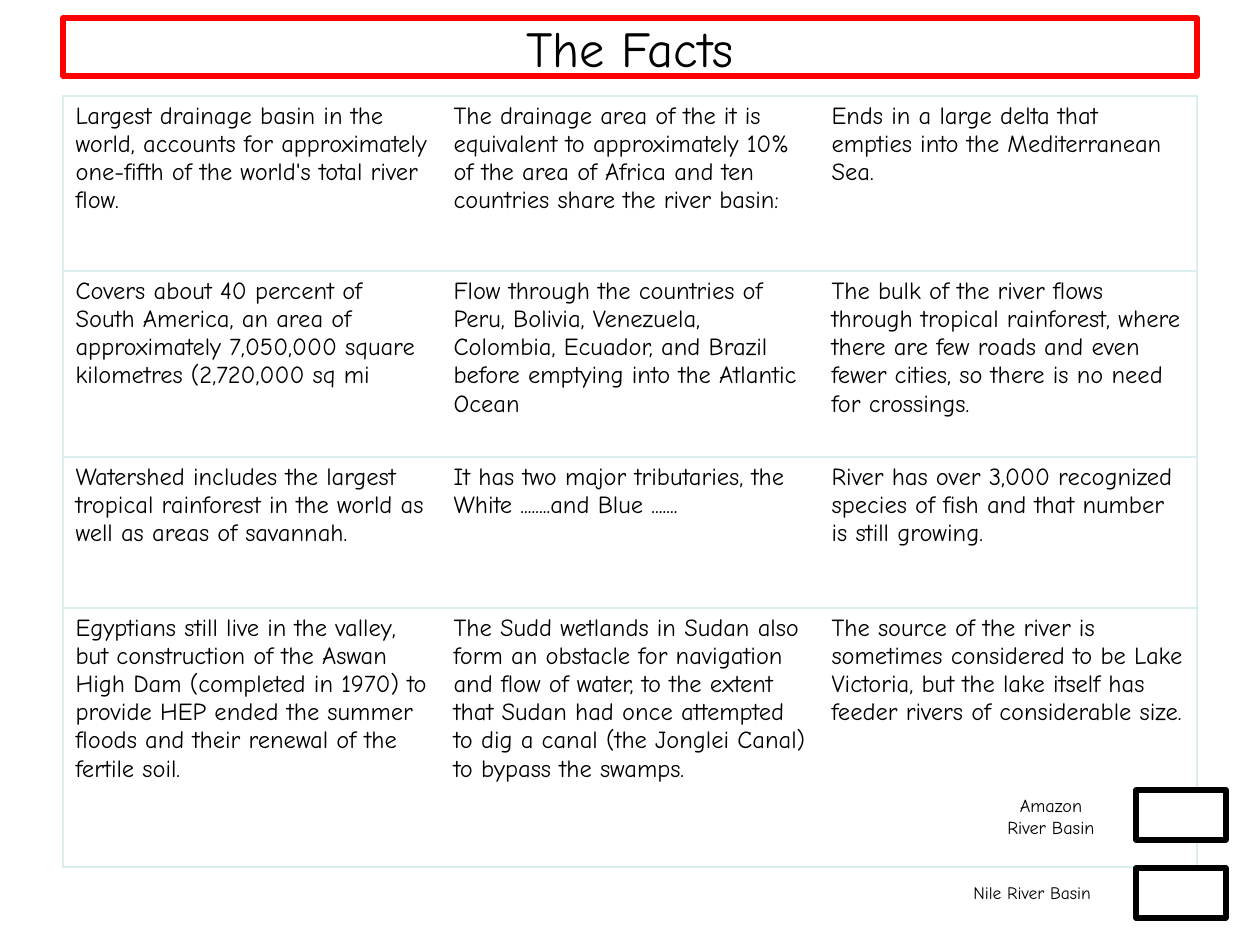
from lxml.etree import SubElement
from pptx import Presentation
from pptx.dml.color import RGBColor
from pptx.enum.shapes import MSO_SHAPE
from pptx.enum.text import MSO_ANCHOR, MSO_AUTO_SIZE, PP_ALIGN
from pptx.oxml.ns import qn
from pptx.util import Emu, Pt

EMU_PER_PX = 914400 / 126
FONT = "Comic Neue"
COLORS = {"white": "FFFFFF", "black": "000000", "red": "FF0000", "grid": "DAEDEF"}
ROW_HEIGHTS = [175, 186, 151, 259]
FACTS = [
    ["Largest drainage basin in the world, accounts for approximately one-fifth of the world's total river flow.",
     "The drainage area of the it is equivalent to approximately 10% of the area of Africa and ten countries share the river basin:",
     "Ends in a large delta that empties into the Mediterranean Sea."],
    ["Covers about 40 percent of South America, an area of approximately 7,050,000 square kilometres (2,720,000 sq mi",
     "Flow through the countries of Peru, Bolivia, Venezuela, Colombia, Ecuador, and Brazil before emptying into the Atlantic Ocean",
     "The bulk of the river flows through tropical rainforest, where there are few roads and even fewer cities, so there is no need for crossings."],
    ["Watershed includes the largest tropical rainforest in the world as well as areas of savannah.",
     "It has two major tributaries, the White ........and Blue .......",
     "River has over 3,000 recognized species of fish and that number is still growing."],
    ["Egyptians still live in the valley, but construction of the Aswan High Dam (completed in 1970) to provide HEP ended the summer floods and their renewal of the fertile soil.",
     "The Sudd wetlands in Sudan also form an obstacle for navigation and flow of water, to the extent that Sudan had once attempted to dig a canal (the Jonglei Canal) to bypass the swamps.",
     "The source of the river is sometimes considered to be Lake Victoria, but the lake itself has feeder rivers of considerable size."],
]


def px(value):
    return Emu(round(value * EMU_PER_PX))


def rgb(name):
    return RGBColor.from_string(COLORS[name])


def paint(sp, line=None):
    sp.fill.solid()
    sp.fill.fore_color.rgb = rgb("white")
    if line:
        sp.line.color.rgb = rgb(line)
        sp.line.width = Pt(3)
    else:
        sp.line.fill.background()


def write(tf, text, size, align=PP_ALIGN.LEFT):
    tf.text = text
    p = tf.paragraphs[0]
    p.alignment = align
    p.font.name = FONT
    p.font.size = Pt(size)
    p.font.bold = False
    p.font.color.rgb = rgb("black")


def set_title(s, text, x, y, w, h):
    sp = s.shapes.title
    sp.left, sp.top, sp.width, sp.height = px(x), px(y), px(w), px(h)
    paint(sp, "red")
    tf = sp.text_frame
    tf.auto_size = MSO_AUTO_SIZE.NONE
    tf.vertical_anchor = MSO_ANCHOR.MIDDLE
    write(tf, text, 28.8, PP_ALIGN.CENTER)


def set_borders(cell, sides):
    tcPr = cell._tc.get_or_add_tcPr()
    for side in "LRTB":
        ln = SubElement(tcPr, qn(f"a:ln{side}"), w=str(Pt(1)))
        if side in sides:
            fill = SubElement(ln, qn("a:solidFill"))
            SubElement(fill, qn("a:srgbClr"), val=COLORS["grid"])
        else:
            SubElement(ln, qn("a:noFill"))


def add_facts(s, x, y, w):
    cols = len(FACTS[0])
    frame = s.shapes.add_table(len(FACTS), cols, px(x), px(y), px(w), px(sum(ROW_HEIGHTS)))
    table = frame.table
    table.first_row = False
    table.horz_banding = False
    for r, (height, facts) in enumerate(zip(ROW_HEIGHTS, FACTS)):
        table.rows[r].height = px(height)
        for c, fact in enumerate(facts):
            cell = table.cell(r, c)
            write(cell.text_frame, fact, 14)
            set_borders(cell, "TB" + "L" * (c == 0) + "R" * (c == cols - 1))
            cell.fill.solid()
            cell.fill.fore_color.rgb = rgb("white")


def add_box(s, x, y, w, h, line=None):
    sp = s.shapes.add_shape(MSO_SHAPE.RECTANGLE, px(x), px(y), px(w), px(h))
    sp.shadow.inherit = False
    paint(sp, line)
    return sp


def add_label(s, text, x, y, w, h):
    tf = s.shapes.add_textbox(px(x), px(y), px(w), px(h)).text_frame
    tf.word_wrap = False
    tf.auto_size = MSO_AUTO_SIZE.SHAPE_TO_FIT_TEXT
    write(tf, text, 10)


def main():
    prs = Presentation()
    prs.slide_width, prs.slide_height = px(1260), px(945)
    s = prs.slides.add_slide(prs.slide_layouts[5])
    set_title(s, "The Facts", 63, 18, 1134, 58)
    add_facts(s, 63, 96, 1134)
    for y in (790, 868):
        add_box(s, 1136, y, 90, 50, "black")
    amazon = add_box(s, 987, 790, 128, 52)
    amazon.text_frame.vertical_anchor = MSO_ANCHOR.MIDDLE
    write(amazon.text_frame, "Amazon River Basin", 10.4, PP_ALIGN.CENTER)
    add_label(s, "Nile River Basin", 961, 876, 155, 34)
    prs.save("out.pptx")


if __name__ == "__main__":
    main()
